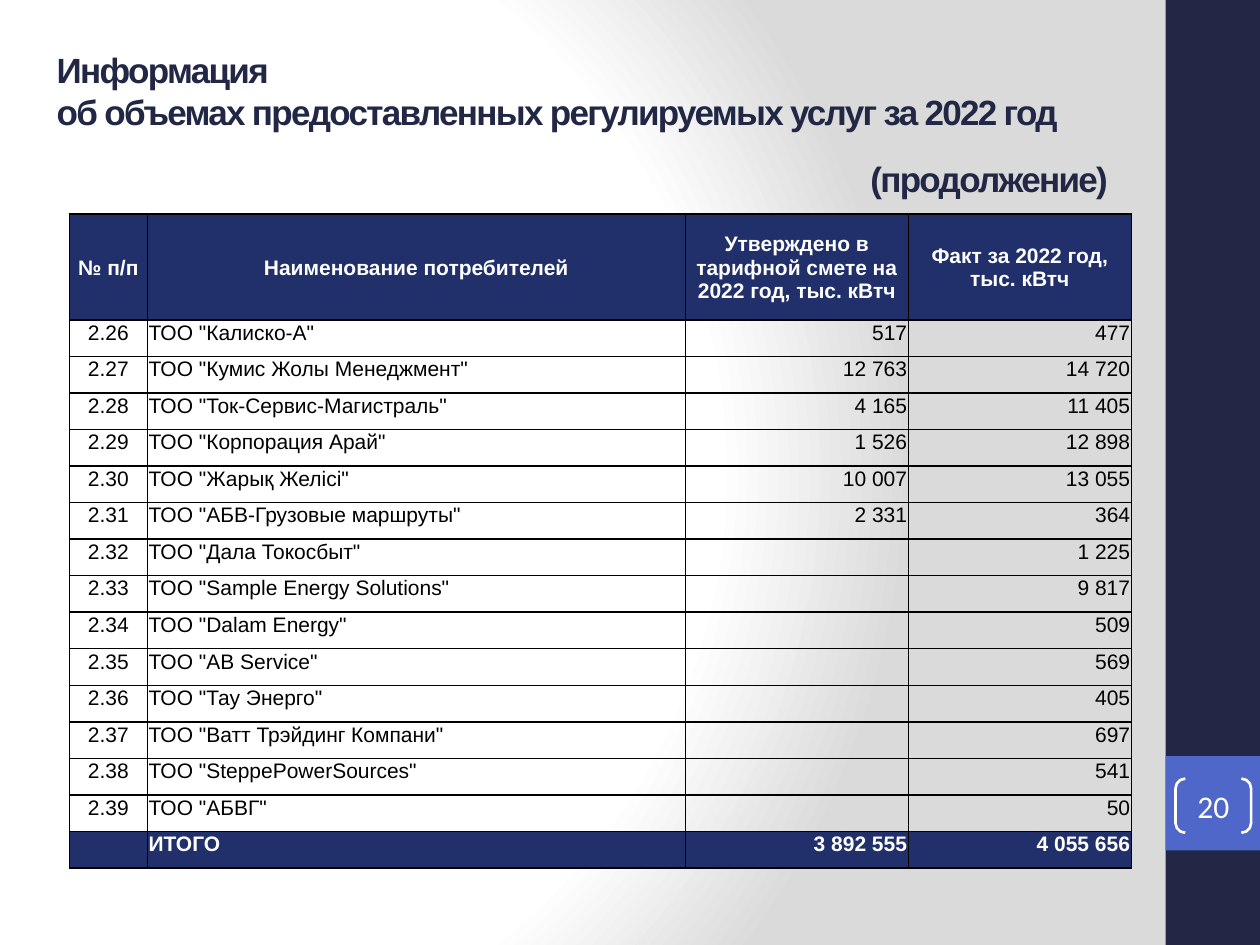
from lxml import etree
from pptx import Presentation
from pptx.dml.color import RGBColor
from pptx.enum.shapes import MSO_SHAPE
from pptx.enum.text import MSO_ANCHOR, MSO_AUTO_SIZE, PP_ALIGN
from pptx.oxml import parse_xml
from pptx.oxml.ns import nsdecls, qn
from pptx.util import Inches, Pt

LEFT, MID, RIGHT = PP_ALIGN.LEFT, PP_ALIGN.CENTER, PP_ALIGN.RIGHT
TOP, CENTRE = MSO_ANCHOR.TOP, MSO_ANCHOR.MIDDLE
RECT, BRACKET = MSO_SHAPE.RECTANGLE, MSO_SHAPE.DOUBLE_BRACKET
NO_FIT = MSO_AUTO_SIZE.NONE

NAVY = RGBColor(0x21, 0x27, 0x45)
BLUE = RGBColor(0x4E, 0x67, 0xC8)
HEAD = RGBColor(0x21, 0x30, 0x6A)
WHITE = RGBColor(0xFF, 0xFF, 0xFF)
BLACK = RGBColor(0, 0, 0)
GREY = RGBColor(0xDA, 0xDA, 0xDA)

WIDE, HIGH = 10, 7.5
BAR = 0.75
COLS = [0.62, 4.27, 1.77, 1.77]
HEAD_ROW, ROW = 0.84, 0.29
ALIGNS = [MID, LEFT, RIGHT, RIGHT]

TITLE = "Информация\vоб объемах предоставленных регулируемых услуг за 2022 год"
HEADS = ["№ п/п", "Наименование потребителей",
         "Утверждено в тарифной смете на 2022 год, тыс. кВтч",
         "Факт за 2022 год,\vтыс. кВтч"]
DATA = [
    ("Калиско-А", "517", "477"),
    ("Кумис Жолы Менеджмент", "12 763", "14 720"),
    ("Ток-Сервис-Магистраль", "4 165", "11 405"),
    ("Корпорация Арай", "1 526", "12 898"),
    ("Жарық Желісі", "10 007", "13 055"),
    ("АБВ-Грузовые маршруты", "2 331", "364"),
    ("Дала Токосбыт", "", "1 225"),
    ("Sample Energy Solutions", "", "9 817"),
    ("Dalam Energy", "", "509"),
    ("AB Service", "", "569"),
    ("Тау Энерго", "", "405"),
    ("Ватт Трэйдинг Компани", "", "697"),
    ("SteppePowerSources", "", "541"),
    ("АБВГ", "", "50"),
]
TOTAL = ["", "ИТОГО", "3 892 555", "4 055 656"]


def put(frame, text, size=12, color=BLACK, bold=False, align=LEFT,
        font="Arial", gap=0):
    para = frame.paragraphs[0]
    para.alignment = align
    for i, line in enumerate(text.split("\v")):
        if i:
            para.add_line_break()
        run = para.add_run()
        run.text = line
        run.font.size = Pt(size)
        run.font.name = font
        run.font.bold = bold
        run.font.color.rgb = color
        if gap:
            run.font._element.set("spc", str(gap * 100))


def box(slide, kind, x, y, w, h, fill=None, line=None):
    shape = slide.shapes.add_shape(
        kind, Inches(x), Inches(y), Inches(w), Inches(h))
    shape.shadow.inherit = False
    if fill is None:
        shape.fill.background()
    else:
        shape.fill.solid()
        shape.fill.fore_color.rgb = fill
    if line is None:
        shape.line.fill.background()
    else:
        shape.line.color.rgb = line
        shape.line.width = Pt(1.5)
    return shape


def shade(slide):
    stops = "".join(
        f'<a:gs pos="{pos * 1000}"><a:srgbClr val="{color}"/></a:gs>'
        for pos, color in [(0, WHITE), (75, WHITE), (100, GREY)])
    back = parse_xml(
        f'<p:bg {nsdecls("p", "a")}><p:bgPr><a:gradFill rotWithShape="1">'
        f'<a:gsLst>{stops}</a:gsLst><a:path path="circle">'
        '<a:fillToRect l="20000" t="50000" r="100000" b="50000"/></a:path>'
        '</a:gradFill><a:effectLst/></p:bgPr></p:bg>')
    slide.element.cSld.insert(0, back)


def edge(cell):
    props = cell._tc.get_or_add_tcPr()
    for side in ("lnL", "lnR", "lnT", "lnB"):
        line = etree.SubElement(props, qn(f"a:{side}"), w=str(Pt(1)))
        fill = etree.SubElement(line, qn("a:solidFill"))
        etree.SubElement(fill, qn("a:srgbClr"), val=str(BLACK))


def fill_cell(cell, text, align, strong, anchor):
    cell.margin_left = cell.margin_right = cell.margin_top = Inches(0.01)
    cell.margin_bottom = 0
    cell.vertical_anchor = anchor
    edge(cell)
    if strong:
        cell.fill.solid()
        cell.fill.fore_color.rgb = HEAD
    else:
        cell.fill.background()
    put(cell.text_frame, text, align=align, bold=strong,
        color=WHITE if strong else BLACK)


def add_grid(slide, x, y):
    body = [[f"2.{i}", f'ТОО "{name}"', plan, fact]
            for i, (name, plan, fact) in enumerate(DATA, 26)]
    rows = [HEADS, *body, TOTAL]
    last = len(rows) - 1
    table = slide.shapes.add_table(
        len(rows), len(COLS), Inches(x), Inches(y), Inches(sum(COLS)),
        Inches(HEAD_ROW + ROW * last)).table
    table.first_row = table.horz_banding = False
    for col, width in zip(table.columns, COLS):
        col.width = Inches(width)
    for r, row in enumerate(rows):
        table.rows[r].height = Inches(ROW if r else HEAD_ROW)
        for c, text in enumerate(row):
            fill_cell(table.cell(r, c), text, ALIGNS[c] if r else MID,
                      r in (0, last), TOP if r else CENTRE)


def add_title(slide):
    title = slide.shapes.title
    title.left, title.top = Inches(0.35), Inches(0.35)
    title.width, title.height = Inches(8.82), Inches(0.73)
    frame = title.text_frame
    frame.auto_size = NO_FIT
    frame.vertical_anchor = CENTRE
    put(frame, TITLE, size=20, color=NAVY, bold=True, gap=-1)


def add_note(slide):
    note = slide.shapes.add_textbox(
        Inches(6.81), Inches(1.22), Inches(2.17), Inches(0.4))
    frame = note.text_frame
    frame.word_wrap = True
    frame.vertical_anchor = CENTRE
    put(frame, "(продолжение)", size=20, color=NAVY, bold=True, gap=-1)


def add_page(slide):
    edge_x = WIDE - BAR
    box(slide, RECT, edge_x, 0, BAR, HIGH, fill=NAVY)
    box(slide, RECT, edge_x, HIGH * 0.8, BAR, BAR, fill=BLUE)
    mark = box(slide, BRACKET, 9.33, 6.18, 0.6, 0.43, line=WHITE)
    mark.adjustments[0] = 0.18
    frame = mark.text_frame
    frame.margin_left = frame.margin_right = 0
    frame.margin_top = frame.margin_bottom = 0
    frame.vertical_anchor = CENTRE
    put(frame, "20", size=18, color=WHITE, align=MID, font="Calibri")


def main():
    deck = Presentation()
    deck.slide_width, deck.slide_height = Inches(WIDE), Inches(HIGH)
    slide = deck.slides.add_slide(deck.slide_layouts[5])
    shade(slide)
    add_page(slide)
    add_title(slide)
    add_grid(slide, 0.55, 1.7)
    add_note(slide)
    deck.save("out.pptx")


if __name__ == "__main__":
    main()
